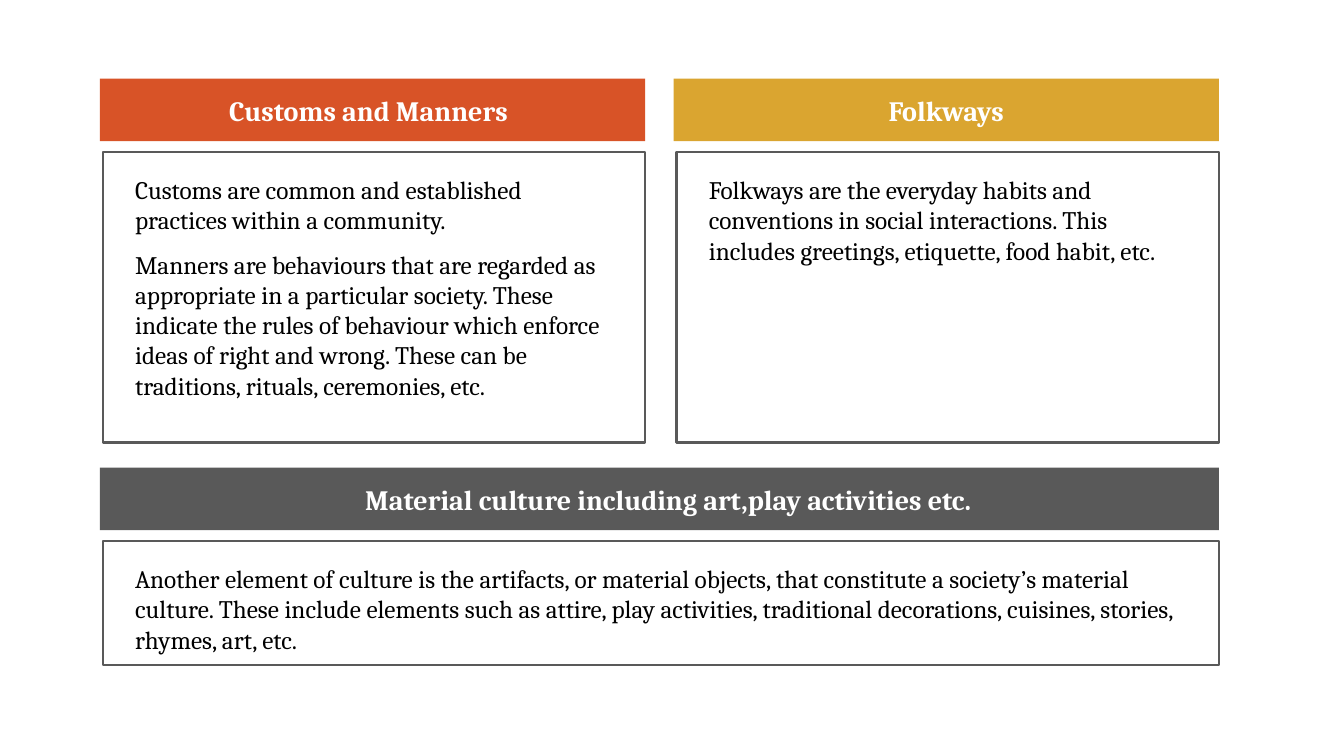
import pptx
import pptx.util
import pptx.dml.color
import pptx.enum.shapes
import pptx.enum.text

RGB = pptx.dml.color.RGBColor
Inches, Pt = pptx.util.Inches, pptx.util.Pt
ALIGN, ANCHOR = pptx.enum.text.PP_ALIGN, pptx.enum.text.MSO_ANCHOR

ORANGE = RGB(0xD8, 0x53, 0x27)
GOLD = RGB(0xDA, 0xA5, 0x30)
GREY = RGB(0x59, 0x59, 0x59)
WHITE = RGB(0xFF, 0xFF, 0xFF)
BLACK = RGB(0, 0, 0)
FONT = "Cambria"

# heading, colour, column, span, top, body height, heading shift, paragraphs
PANELS = [
    ("Customs and Manners", ORANGE, 0, 1, 0.78, 2.88, -0.04, [
        "Customs are common and established practices within a community.",
        "Manners are behaviours that are regarded as appropriate in a "
        "particular society. These indicate the rules of behaviour which "
        "enforce ideas of right and wrong. These can be traditions, rituals, "
        "ceremonies, etc."]),
    ("Folkways", GOLD, 1, 1, 0.78, 2.88, 0, [
        "Folkways are the everyday habits and conventions in social "
        "interactions. This includes greetings, etiquette, food habit, etc."]),
    ("Material culture including art,play activities etc.", GREY,
     0, 2, 4.64, 1.23, 0.09, [
        "Another element of culture is the artifacts, or material objects, "
        "that constitute a society’s material culture. These include elements "
        "such as attire, play activities, traditional decorations, cuisines, "
        "stories, rhymes, art, etc."]),
]

LEFT, COL, GAP = 0.99, 5.41, 0.28
HEAD, DROP, INDENT = 0.62, 0.73, 0.03


def add_box(slide, place, insets, lines, size, color, bold, align, anchor):
    """Add a rectangle holding its own text; insets run left, top, right, bottom."""
    box = slide.shapes.add_shape(
        pptx.enum.shapes.MSO_SHAPE.RECTANGLE, *map(Inches, place))
    box.shadow.inherit = False
    frame = box.text_frame
    frame.word_wrap = True
    frame.vertical_anchor = anchor
    (frame.margin_left, frame.margin_top,
     frame.margin_right, frame.margin_bottom) = map(Inches, insets)
    for i, line in enumerate(lines):
        para = frame.paragraphs[0] if i == 0 else frame.add_paragraph()
        para.text = line
        para.alignment = align
        if i:
            para.space_before = Pt(10)
        font = para.font
        font.name, font.size, font.bold = FONT, Pt(size), bold
        font.color.rgb = color
    return box


def add_panel(slide, title, color, col, span, top, height, shift, lines):
    left = LEFT + col * (COL + GAP)
    width = span * COL + (span - 1) * GAP
    head = add_box(slide, (left, top, width, HEAD),
                   (0.1 + shift, 0.05, 0.1 - shift, 0.05), [title],
                   20, WHITE, True, ALIGN.CENTER, ANCHOR.MIDDLE)
    head.fill.solid()
    head.fill.fore_color.rgb = color
    head.line.fill.background()

    body = add_box(slide, (left + INDENT, top + DROP, width - INDENT, height),
                   (0.32, 0.22, 0.43, 0.1), lines,
                   18, BLACK, False, ALIGN.LEFT, ANCHOR.TOP)
    body.fill.background()
    body.line.color.rgb = GREY
    body.line.width = Pt(1.5)


def main():
    deck = pptx.Presentation()
    deck.slide_width, deck.slide_height = Inches(13.33), Inches(7.5)
    slide = deck.slides.add_slide(deck.slide_layouts[6])
    for panel in PANELS:
        add_panel(slide, *panel)
    deck.save("out.pptx")


if __name__ == "__main__":
    main()
